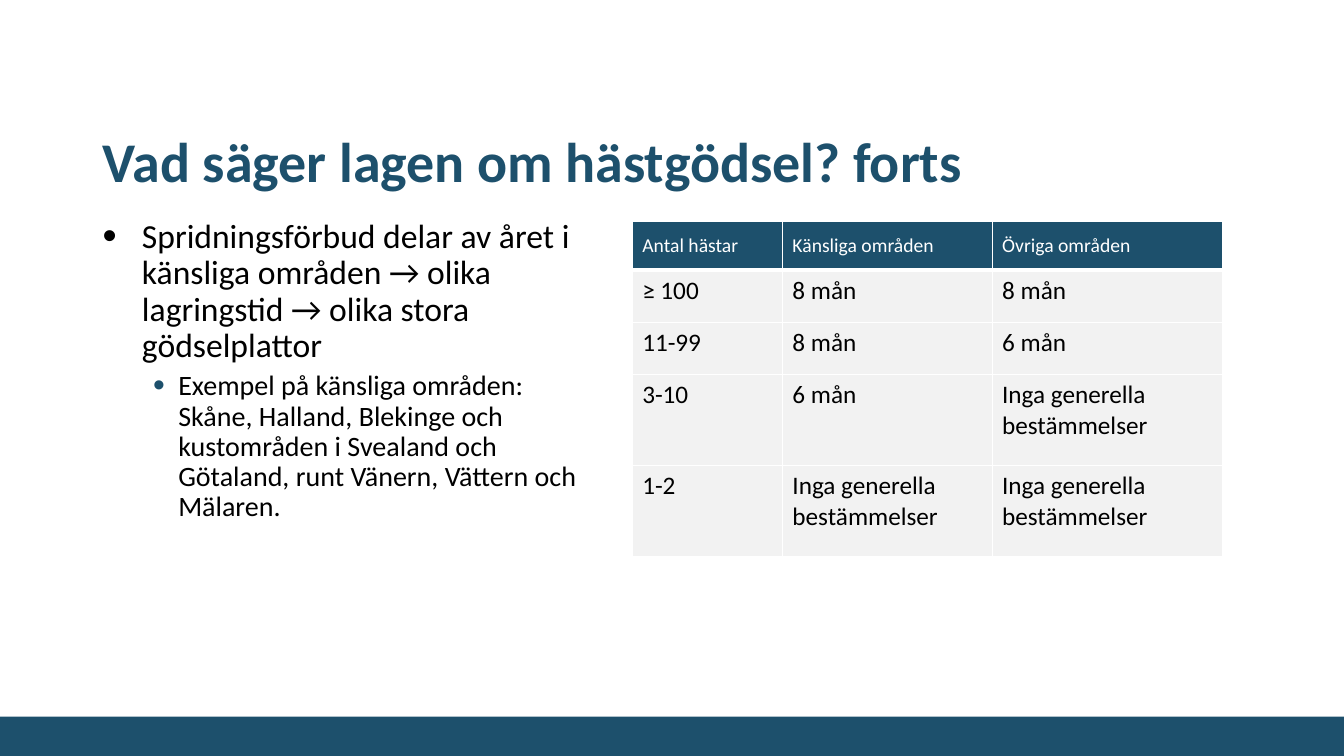
from lxml import etree
from pptx import Presentation
from pptx.dml.color import RGBColor
from pptx.enum import shapes, text
from pptx.oxml import ns
from pptx.util import Inches, Pt

COLORS = {"blue": "1D506C", "gray": "F2F2F2", "white": "FFFFFF", "black": "000000"}
FONT = "Calibri"
WIDTH, HEIGHT = 13.33, 7.5
COLS = [1.49, 2.08, 2.29]
ROWS = [0.48, 0.52, 0.52, 0.9, 0.9]
NONE = "Inga generella bestämmelser"
DATA = [
    ["Antal hästar", "Känsliga områden", "Övriga områden"],
    ["≥ 100", "8 mån", "8 mån"],
    ["11-99", "8 mån", "6 mån"],
    ["3-10", "6 mån", NONE],
    ["1-2", NONE, NONE],
]
# Wording, indent level, left margin, hanging indent, size, space before, bullet colour
POINTS = [
    ("Spridningsförbud delar av året i känsliga områden → olika lagringstid "
     "→ olika stora gödselplattor", 0, 0.39, 0.39, 24, 0, "black"),
    ("Exempel på känsliga områden: Skåne, Halland, Blekinge och kustområden i "
     "Svealand och Götaland, runt Vänern, Vättern och Mälaren.",
     1, 0.75, 0.25, 20, 5, "blue"),
]


def rgb(name):
    return RGBColor.from_string(COLORS[name])


def add_sub(parent, tag, **attrs):
    return etree.SubElement(parent, ns.qn(tag), attrs)


def set_font(para, size, color, bold=False):
    font = para.font
    font.name, font.size, font.bold = FONT, Pt(size), bold
    font.color.rgb = rgb(color)


def add_box(slide, box, anchor):
    frame = slide.shapes.add_textbox(*map(Inches, box)).text_frame
    frame.word_wrap = True
    frame.vertical_anchor = anchor
    return frame


def add_title(slide, box):
    para = add_box(slide, box, text.MSO_ANCHOR.BOTTOM).paragraphs[0]
    para.text = "Vad säger lagen om hästgödsel? forts"
    para.line_spacing = 0.9
    set_font(para, 40, "blue", True)


def set_bullet(para, margin, hang, color):
    props = para._p.get_or_add_pPr()
    props.set("marL", str(Inches(margin)))
    props.set("indent", str(-Inches(hang)))
    add_sub(add_sub(props, "a:buClr"), "a:srgbClr", val=COLORS[color])
    add_sub(props, "a:buSzPct", val="120000")
    add_sub(props, "a:buFont", typeface="Arial")
    add_sub(props, "a:buChar", char="•")


def add_points(slide, box):
    frame = add_box(slide, box, text.MSO_ANCHOR.TOP)
    for i, (words, level, margin, hang, size, before, color) in enumerate(POINTS):
        para = frame.add_paragraph() if i else frame.paragraphs[0]
        para.text, para.level = words, level
        para.line_spacing, para.space_before = 0.9, Pt(before)
        set_bullet(para, margin, hang, color)
        set_font(para, size, "black")


def set_edges(cell, base):
    """Draw white cell borders, with the given width at the bottom."""
    props = cell._tc.get_or_add_tcPr()
    for side in "LRTB":
        width = base if side == "B" else 1
        line = add_sub(props, f"a:ln{side}", w=str(Pt(width)))
        add_sub(add_sub(line, "a:solidFill"), "a:srgbClr", val=COLORS["white"])


def add_grid(slide, left, top):
    box = map(Inches, (left, top, sum(COLS), sum(ROWS)))
    table = slide.shapes.add_table(len(ROWS), len(COLS), *box).table
    table.horz_banding = False
    for col, width in zip(table.columns, COLS):
        col.width = Inches(width)
    for r, (row, height) in enumerate(zip(table.rows, ROWS)):
        row.height = Inches(height)
        head = r == 0
        for cell, words in zip(row.cells, DATA[r]):
            cell.text = words
            set_edges(cell, 3 if head else 1)
            cell.fill.solid()
            cell.fill.fore_color.rgb = rgb("blue" if head else "gray")
            if head:
                cell.vertical_anchor = text.MSO_ANCHOR.MIDDLE
            set_font(cell.text_frame.paragraphs[0], 14 if head else 18,
                     "white" if head else "black")


def add_footer(slide, height):
    box = map(Inches, (0, HEIGHT - height, WIDTH, height))
    bar = slide.shapes.add_shape(shapes.MSO_SHAPE.RECTANGLE, *box)
    bar.shadow.inherit = False
    bar.fill.solid()
    bar.fill.fore_color.rgb = rgb("blue")
    bar.line.fill.background()


def main():
    deck = Presentation()
    deck.slide_width, deck.slide_height = Inches(WIDTH), Inches(HEIGHT)
    slide = deck.slides.add_slide(deck.slide_layouts[6])
    add_footer(slide, 0.39)
    add_title(slide, (0.92, 0.53, 11.5, 1.45))
    add_points(slide, (0.92, 2.13, 4.96, 4.76))
    add_grid(slide, 6.27, 2.2)
    deck.save("out.pptx")


if __name__ == "__main__":
    main()
